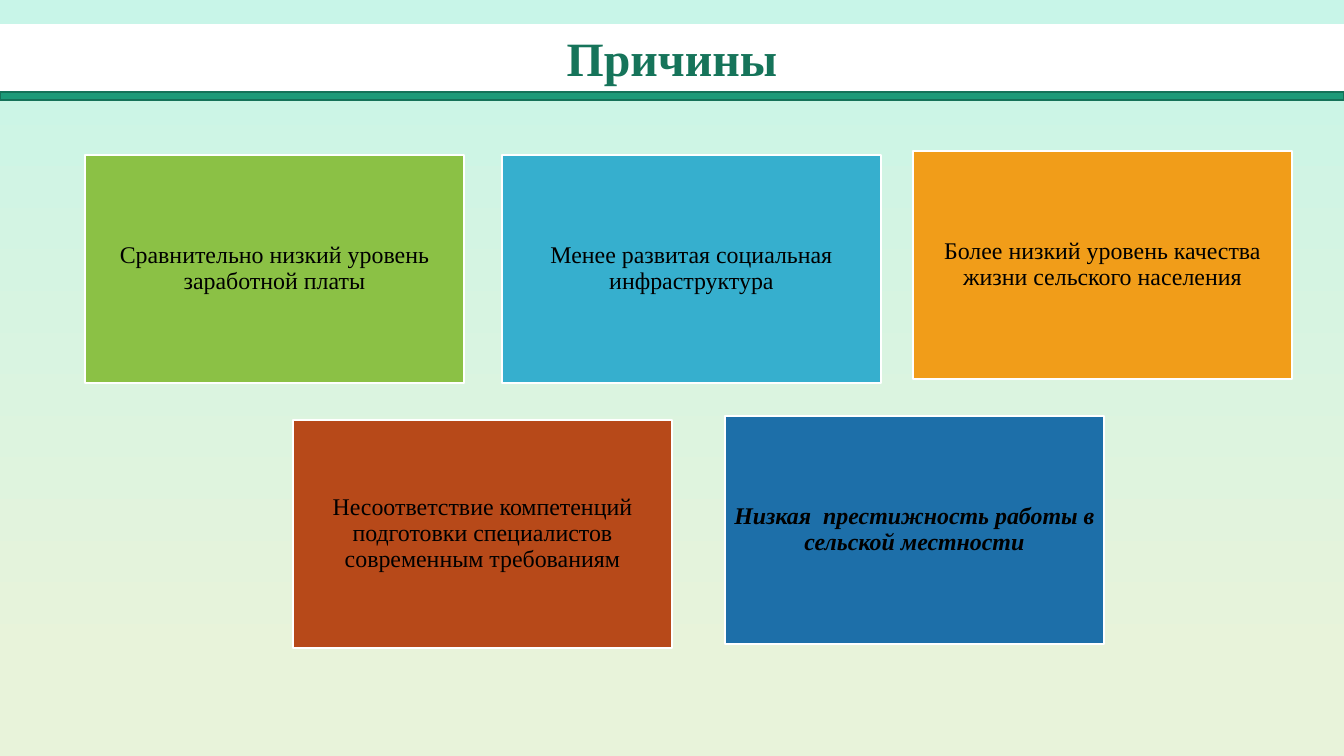
"""Build a slide that names five causes in coloured boxes under a title band."""
from pptx import Presentation
from pptx.dml.color import RGBColor
from pptx.enum.shapes import MSO_SHAPE as Shape
from pptx.enum.text import MSO_ANCHOR as Anchor, PP_ALIGN as Align
from pptx.util import Pt

PX = 9565
WIDE, HIGH = 1344, 756
BOX_W, BOX_H = 379, 228
INSET = 7

BLACK = RGBColor(0x00, 0x00, 0x00)
WHITE = RGBColor(0xFF, 0xFF, 0xFF)
MINT = RGBColor(0xC8, 0xF5, 0xE8)
CREAM = RGBColor(0xE8, 0xF3, 0xDA)
PINE = RGBColor(0x16, 0x74, 0x5A)
TEAL = RGBColor(0x1D, 0x9A, 0x78)
EDGE = RGBColor(0x15, 0x72, 0x59)
LIME = RGBColor(0x8B, 0xC1, 0x45)
SKY = RGBColor(0x36, 0xAF, 0xCE)
AMBER = RGBColor(0xF1, 0x9D, 0x19)
RUST = RGBColor(0xB7, 0x49, 0x19)
BLUE = RGBColor(0x1D, 0x6F, 0xA9)


def add_box(x, y, w, h, fill, line):
    box = slide.shapes.add_shape(Shape.RECTANGLE, x * PX, y * PX, w * PX, h * PX)
    box.shadow.inherit = False
    box.fill.solid()
    box.fill.fore_color.rgb = fill
    box.line.color.rgb = line
    box.line.width = Pt(1)
    return box


def set_text(frame, text, color, style):
    frame.text = text
    frame.word_wrap = True
    para = frame.paragraphs[0]
    para.alignment = Align.CENTER
    font = para.runs[0].font
    font.name = "Times New Roman"
    font.color.rgb = color
    for name, value in style.items():
        setattr(font, name, value)
    return para


deck = Presentation()
deck.slide_width, deck.slide_height = WIDE * PX, HIGH * PX
slide = deck.slides.add_slide(deck.slide_layouts[5])

back = slide.background.fill
back.gradient()
back.gradient_angle = 270
for stop, place, color in zip(back.gradient_stops, (0, 0.88), (MINT, CREAM)):
    stop.position = place
    stop.color.rgb = color

causes = [
    (85, 155, LIME, "Сравнительно низкий уровень заработной платы", {}),
    (502, 155, SKY, "Менее развитая социальная инфраструктура", {}),
    (725, 416, BLUE, "Низкая  престижность работы в сельской местности",
     {"bold": True, "italic": True}),
    (293, 420, RUST,
     "Несоответствие компетенций подготовки специалистов современным требованиям", {}),
    (913, 151, AMBER, "Более низкий уровень качества жизни сельского населения", {}),
]
for x, y, fill, text, style in causes:
    frame = add_box(x, y, BOX_W, BOX_H, fill, WHITE).text_frame
    frame.vertical_anchor = Anchor.MIDDLE
    for side in ("left", "top", "right", "bottom"):
        setattr(frame, f"margin_{side}", INSET * PX)
    para = set_text(frame, text, BLACK, {"size": Pt(18), **style})
    para.line_spacing = 0.9

title = slide.shapes.title
place = {"left": 0, "top": 24, "width": WIDE, "height": 68}
for name, value in place.items():
    setattr(title, name, value * PX)
title.fill.solid()
title.fill.fore_color.rgb = WHITE
title.text_frame.vertical_anchor = Anchor.TOP
set_text(title.text_frame, "Причины", PINE, {"size": Pt(36), "bold": True})

add_box(0, 92, WIDE, 8, TEAL, EDGE)

deck.save("out.pptx")
